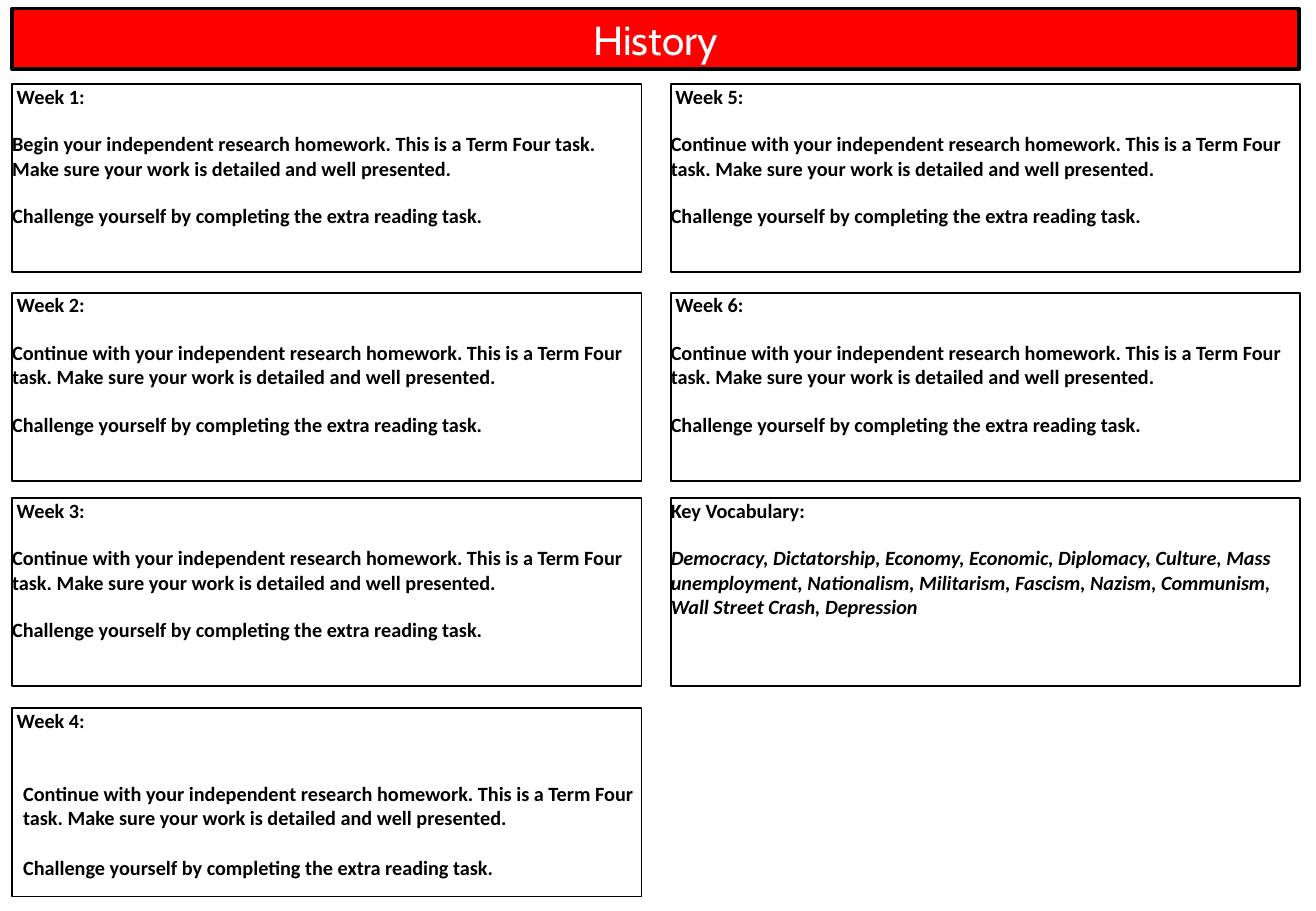
from pptx import Presentation
from pptx.dml.color import RGBColor
from pptx.enum.shapes import MSO_SHAPE
from pptx.enum.text import MSO_ANCHOR, MSO_AUTO_SIZE, PP_ALIGN
from pptx.util import Inches, Pt


def paint(part, color):
    part.solid()
    part.fore_color.rgb = RGBColor.from_string(color)


def style(font, color, form):
    paint(font.fill, color)
    for key, value in form.items():
        setattr(font, key, value)


# Slide
deck = Presentation()
deck.slide_width, deck.slide_height = Inches(10.83), Inches(7.5)
slide = deck.slides.add_slide(deck.slide_layouts[5])

# Grid
lefts = [0.1, 5.52]
tops = [0.69, 2.41, 4.1, 5.83]
wide, high = 5.18, 1.55

# Title bar
title = slide.shapes.title
title.left, title.top = Inches(lefts[0]), Inches(0.07)
title.width, title.height = Inches(10.59), Inches(0.5)
paint(title.fill, "FF0000")
paint(title.line.fill, "000000")
title.line.width = Pt(2.25)
frame = title.text_frame
frame.text = "History"
frame.auto_size = MSO_AUTO_SIZE.NONE
frame.vertical_anchor = MSO_ANCHOR.MIDDLE
head = frame.paragraphs[0]
head.alignment = PP_ALIGN.CENTER
style(head.font, "FFFFFF", {"name": "Cabin", "size": Pt(24)})

# Texts of the boxes, column by column
detail = ("your independent research homework. This is a Term Four task. "
          "Make sure your work is detailed and well presented.")
extra = "Challenge yourself by completing the extra reading task."
boxes = []
for week in range(1, 7):
    verb = "Begin" if week == 1 else "Continue with"
    boxes.append([f" Week {week}:", f"{verb} {detail}", extra])
boxes.append([
    "Key Vocabulary:",
    "Democracy, Dictatorship, Economy, Economic, Diplomacy, Culture, "
    "Mass unemployment, Nationalism, Militarism, Fascism, Nazism, "
    "Communism, Wall Street Crash, Depression",
])

# Boxes
body = {"name": "Calibri", "size": Pt(12), "bold": True}
layout = {"margin_left": 0, "margin_top": 0, "margin_right": 0,
          "margin_bottom": 0, "word_wrap": True,
          "vertical_anchor": MSO_ANCHOR.TOP}
for spot, lines in enumerate(boxes):
    col, row = divmod(spot, len(tops))
    box = slide.shapes.add_shape(
        MSO_SHAPE.RECTANGLE, Inches(lefts[col]), Inches(tops[row]),
        Inches(wide), Inches(high))
    box.shadow.inherit = False
    box.fill.background()
    paint(box.line.fill, "000000")
    box.line.width = Pt(1)
    frame = box.text_frame
    for key, value in layout.items():
        setattr(frame, key, value)

    # Week 4 has an indented body set lower in its box
    low = lines[0] == " Week 4:"
    gaps = [0, 28.8, 15.2] if low else [0, 13.9, 13.9]
    for rank, (line, gap) in enumerate(zip(lines, gaps)):
        para = frame.add_paragraph() if rank else frame.paragraphs[0]
        para.text = line
        para.alignment = PP_ALIGN.LEFT
        para.space_before = Pt(gap)
        if low and rank:
            para._p.get_or_add_pPr().set("marL", str(Inches(0.09)))
        style(para.font, "000000", body)
        para.font.italic = lines[0] == "Key Vocabulary:" and rank > 0

deck.save("out.pptx")
